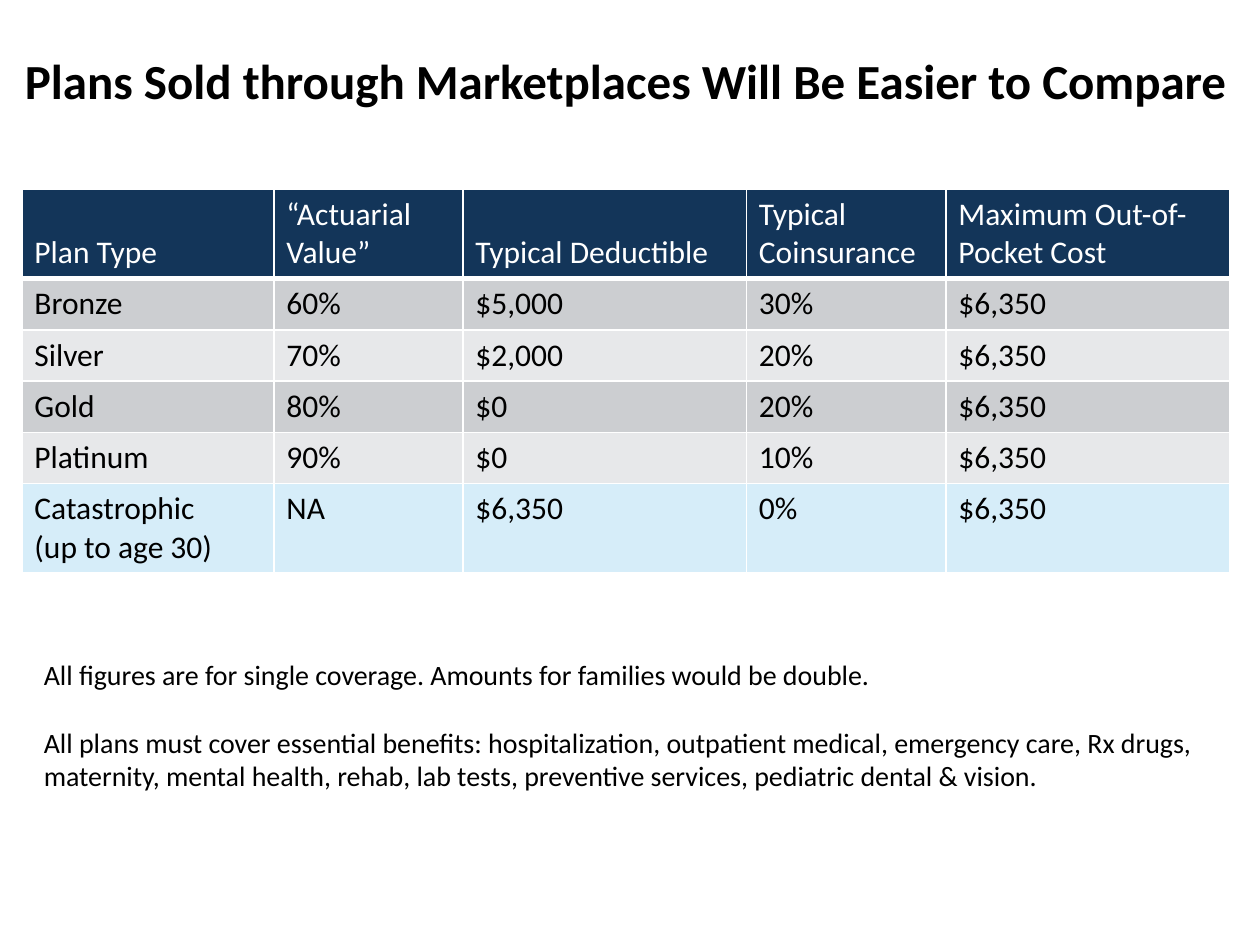
"""Build a slide comparing the health plans sold through marketplaces."""
from dataclasses import dataclass

from lxml import etree
from pptx import Presentation
from pptx.dml.color import RGBColor
from pptx.enum.text import MSO_ANCHOR
from pptx.oxml.ns import qn
from pptx.util import Pt

TOP, BOTTOM = MSO_ANCHOR.TOP, MSO_ANCHOR.BOTTOM


@dataclass(frozen=True)
class Theme:
    font: str = "Calibri"
    ink: str = "000000"
    white: str = "FFFFFF"
    navy: str = "133559"
    dark: str = "CCCED1"
    light: str = "E7E8EA"
    sky: str = "D6EDF9"
    title: float = 28
    body: float = 18
    note: float = 16
    thin: float = 1
    thick: float = 3


@dataclass(frozen=True)
class Box:
    left: float
    top: float
    width: float
    height: float
    lines: tuple[str, ...]
    size: float
    bold: bool = False
    gap: float = 0


@dataclass(frozen=True)
class Row:
    cells: tuple[str, ...]
    fill: str
    height: float = 29.3
    head: bool = False


THEME = Theme()
LEFT, UPPER = 12.5, 108
COLS = (144, 108, 162, 114, 162)
TALL = 50.4
ROWS = (
    Row(("Plan Type", "“Actuarial Value”", "Typical Deductible",
         "Typical\nCoinsurance", "Maximum Out-of-Pocket Cost"),
        THEME.navy, TALL, True),
    Row(("Bronze", "60%", "$5,000", "30%", "$6,350"), THEME.dark),
    Row(("Silver", "70%", "$2,000", "20%", "$6,350"), THEME.light),
    Row(("Gold", "80%", "$0", "20%", "$6,350"), THEME.dark),
    Row(("Platinum", "90%", "$0", "10%", "$6,350"), THEME.light),
    Row(("Catastrophic\n(up to age 30)", "NA", "$6,350", "0%", "$6,350"),
        THEME.sky, TALL),
)
BOXES = (
    Box(18, 372.2, 678, 85, (
        "All figures are for single coverage. Amounts for families would be double.",
        "All plans must cover essential benefits: hospitalization, outpatient medical, "
        "emergency care, Rx drugs, maternity, mental health, rehab, lab tests, "
        "preventive services, pediatric dental & vision.",
    ), THEME.note, gap=19.5),
    Box(7.2, 25.2, 705.6, 52.6,
        ("Plans Sold through Marketplaces Will Be Easier to Compare",),
        THEME.title, bold=True),
)


def write(frame, lines, size: float, ink: str, bold: bool = False, gap: float = 0) -> None:
    """Write each line as one paragraph."""
    for i, line in enumerate(lines):
        para = frame.add_paragraph() if i else frame.paragraphs[0]
        if i and gap:
            para.space_before = Pt(gap)
        run = para.add_run()
        run.text = line
        font = run.font
        font.name, font.size, font.bold = THEME.font, Pt(size), bold
        font.color.rgb = RGBColor.from_string(ink)


def edge(cell, side: str, width: float) -> None:
    """Draw one white cell border."""
    line = etree.SubElement(cell._tc.get_or_add_tcPr(), qn(f"a:ln{side}"), w=str(Pt(width)))
    fill = etree.SubElement(line, qn("a:solidFill"))
    etree.SubElement(fill, qn("a:srgbClr"), val=THEME.white)


def draw_row(table, index: int, row: Row) -> None:
    """Fill one table row."""
    table.rows[index].height = Pt(row.height)
    above = THEME.thick if index == 1 else THEME.thin
    below = THEME.thick if row.head else THEME.thin
    widths = {"L": THEME.thin, "R": THEME.thin, "T": above, "B": below}
    for cell, text in zip(table.rows[index].cells, row.cells):
        for side, width in widths.items():
            edge(cell, side, width)
        cell.fill.solid()
        cell.fill.fore_color.rgb = RGBColor.from_string(row.fill)
        cell.vertical_anchor = BOTTOM if row.head else TOP
        ink = THEME.white if row.head else THEME.ink
        write(cell.text_frame, text.split("\n"), THEME.body, ink)


def draw_table(slide) -> None:
    """Add the plan table."""
    high = sum(row.height for row in ROWS)
    table = slide.shapes.add_table(
        len(ROWS), len(COLS), Pt(LEFT), Pt(UPPER), Pt(sum(COLS)), Pt(high)).table
    table.first_row = table.horz_banding = False
    for col, width in zip(table.columns, COLS):
        col.width = Pt(width)
    for index, row in enumerate(ROWS):
        draw_row(table, index, row)


def draw_box(slide, box: Box) -> None:
    """Add a wrapped text box."""
    shape = slide.shapes.add_textbox(
        Pt(box.left), Pt(box.top), Pt(box.width), Pt(box.height))
    shape.text_frame.word_wrap = True
    write(shape.text_frame, box.lines, box.size, THEME.ink, box.bold, box.gap)


def main() -> None:
    """Build and save the deck."""
    deck = Presentation()
    deck.slide_width, deck.slide_height = Pt(720), Pt(540)
    slide = deck.slides.add_slide(deck.slide_layouts[6])
    draw_table(slide)
    for box in BOXES:
        draw_box(slide, box)
    deck.save("out.pptx")


if __name__ == "__main__":
    main()
